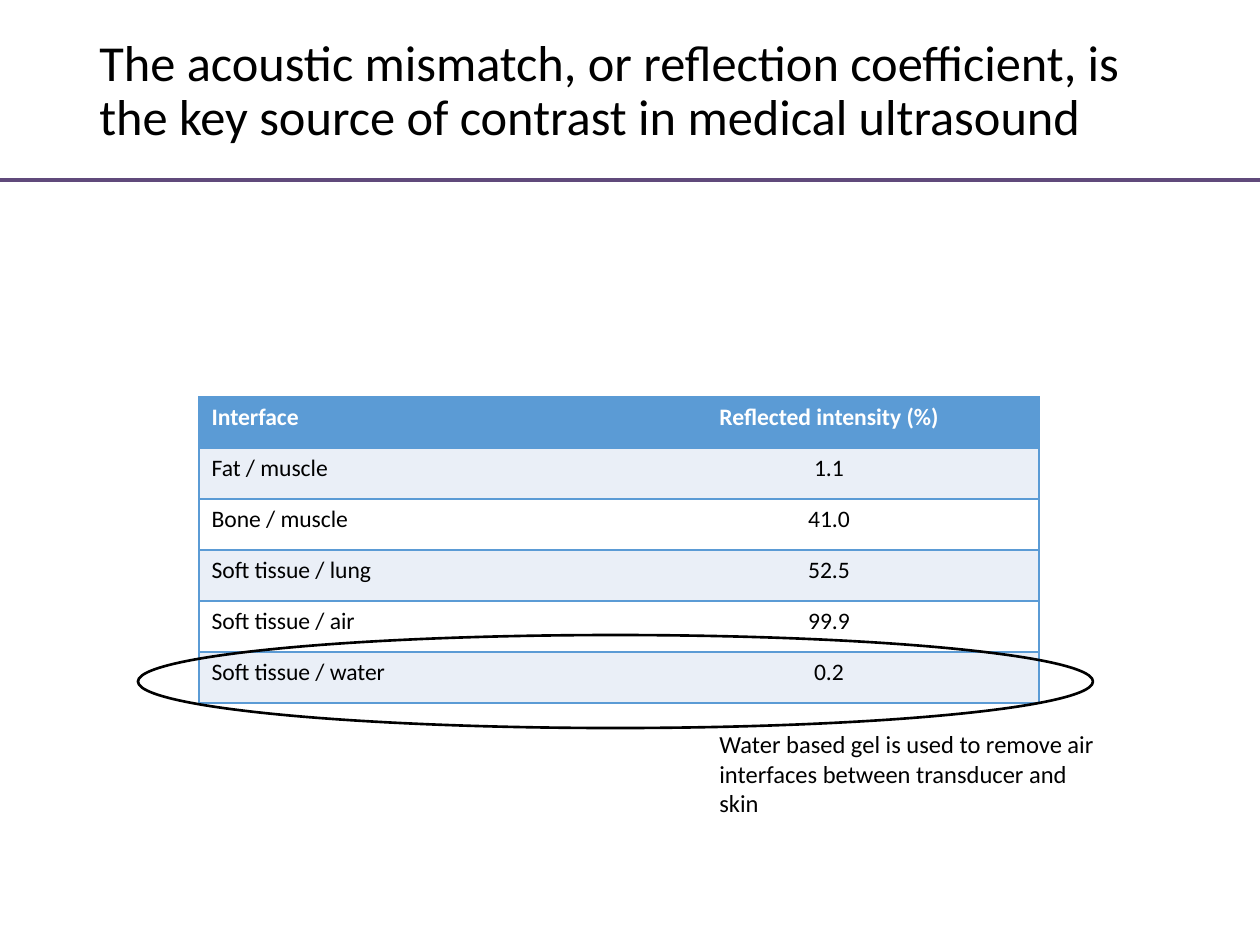
import lxml.etree
import pptx
import pptx.dml.color
import pptx.enum.shapes
import pptx.enum.text
import pptx.oxml.ns
import pptx.util

PX_PER_INCH = 126
ALIGN = pptx.enum.text.PP_ALIGN
ANCHOR = pptx.enum.text.MSO_ANCHOR


class Theme:
    font = "Calibri"
    text, white = "000000", "FFFFFF"
    header, band, rule = "5B9BD5", "EAEFF7", "604A7B"
    title_size, table_size, note_size = 28.8, 13.5, 14
    border_width, ellipse_width, rule_width = 1, 1.5, 2.25


ROWS = [
    ("Interface", "Reflected intensity (%)"),
    ("Fat / muscle", "1.1"),
    ("Bone / muscle", "41.0"),
    ("Soft tissue / lung", "52.5"),
    ("Soft tissue / air", "99.9"),
    ("Soft tissue / water", "0.2"),
]


def px(n):
    return pptx.util.Emu(round(n * 914400 / PX_PER_INCH))


def rgb(value):
    return pptx.dml.color.RGBColor.from_string(value)


def apply(target, formats):
    for name, value in formats.items():
        setattr(target, name, value)


def add_run(p, text, size, color=Theme.text, bold=False):
    r = p.add_run()
    r.text = text
    apply(r.font, {"name": Theme.font, "size": pptx.util.Pt(size), "bold": bold})
    r.font.color.rgb = rgb(color)


def add_text(slide, box, lines, size, anchor=ANCHOR.TOP, spacing=None):
    tf = slide.shapes.add_textbox(*map(px, box)).text_frame
    apply(tf, {"word_wrap": True, "vertical_anchor": anchor})
    for i, line in enumerate(lines):
        p = tf.add_paragraph() if i else tf.paragraphs[0]
        p.line_spacing = spacing
        add_run(p, line, size)


def set_borders(cell, visible):
    """Draw the named sides (L, R, T, B) and clear the others."""
    qn = pptx.oxml.ns.qn
    tc_pr = cell._tc.get_or_add_tcPr()
    for side in "LRTB":
        ln = lxml.etree.SubElement(tc_pr, qn(f"a:ln{side}"))
        if side in visible:
            ln.set("w", str(pptx.util.Pt(Theme.border_width)))
            fill = lxml.etree.SubElement(ln, qn("a:solidFill"))
            lxml.etree.SubElement(fill, qn("a:srgbClr")).set("val", Theme.header)
        else:
            lxml.etree.SubElement(ln, qn("a:noFill"))


def add_table(slide, box, rows):
    table = slide.shapes.add_table(len(rows), len(rows[0]), *map(px, box)).table
    for i, row in enumerate(rows):
        is_header = i == 0
        fill = Theme.header if is_header else Theme.band if i % 2 else Theme.white
        color = Theme.white if is_header else Theme.text
        for j, text in enumerate(row):
            cell = table.cell(i, j)
            set_borders(cell, "RTB" if j else "LTB")
            cell.fill.solid()
            cell.fill.fore_color.rgb = rgb(fill)
            p = cell.text_frame.paragraphs[0]
            p.alignment = ALIGN.CENTER if j else ALIGN.LEFT
            add_run(p, text, Theme.table_size, color, is_header)


def set_line(sp, color, width):
    sp.line.color.rgb = rgb(color)
    sp.line.width = pptx.util.Pt(width)


def add_ellipse(slide, box):
    sp = slide.shapes.add_shape(pptx.enum.shapes.MSO_SHAPE.OVAL, *map(px, box))
    sp.shadow.inherit = False
    sp.fill.background()
    set_line(sp, Theme.text, Theme.ellipse_width)


def add_rule(slide, start, end):
    straight = pptx.enum.shapes.MSO_CONNECTOR.STRAIGHT
    sp = slide.shapes.add_connector(straight, *map(px, start + end))
    set_line(sp, Theme.rule, Theme.rule_width)
    lxml.etree.SubElement(sp._element.spPr, pptx.oxml.ns.qn("a:effectLst"))


def main():
    prs = pptx.Presentation()
    apply(prs, {"slide_width": px(1260), "slide_height": px(945)})
    slide = prs.slides.add_slide(prs.slide_layouts[6])

    # Title
    title = ("The acoustic mismatch, or reflection coefficient, is "
             "the key source of contrast in medical ultrasound")
    add_text(slide, (87, 28, 1086, 128), [title], Theme.title_size,
             ANCHOR.MIDDLE, 0.9)

    # Reflected intensities
    add_table(slide, (199, 397, 840, 306), ROWS)

    # Highlight on the water row, with its note
    add_ellipse(slide, (138, 635, 955, 93))
    add_text(slide, (707, 723, 416, 72),
             ["Water based gel is used to remove air",
              "interfaces between transducer and skin"], Theme.note_size)

    # Rule under the title
    add_rule(slide, (1260, 180), (0, 180))

    prs.save("out.pptx")


if __name__ == "__main__":
    main()
